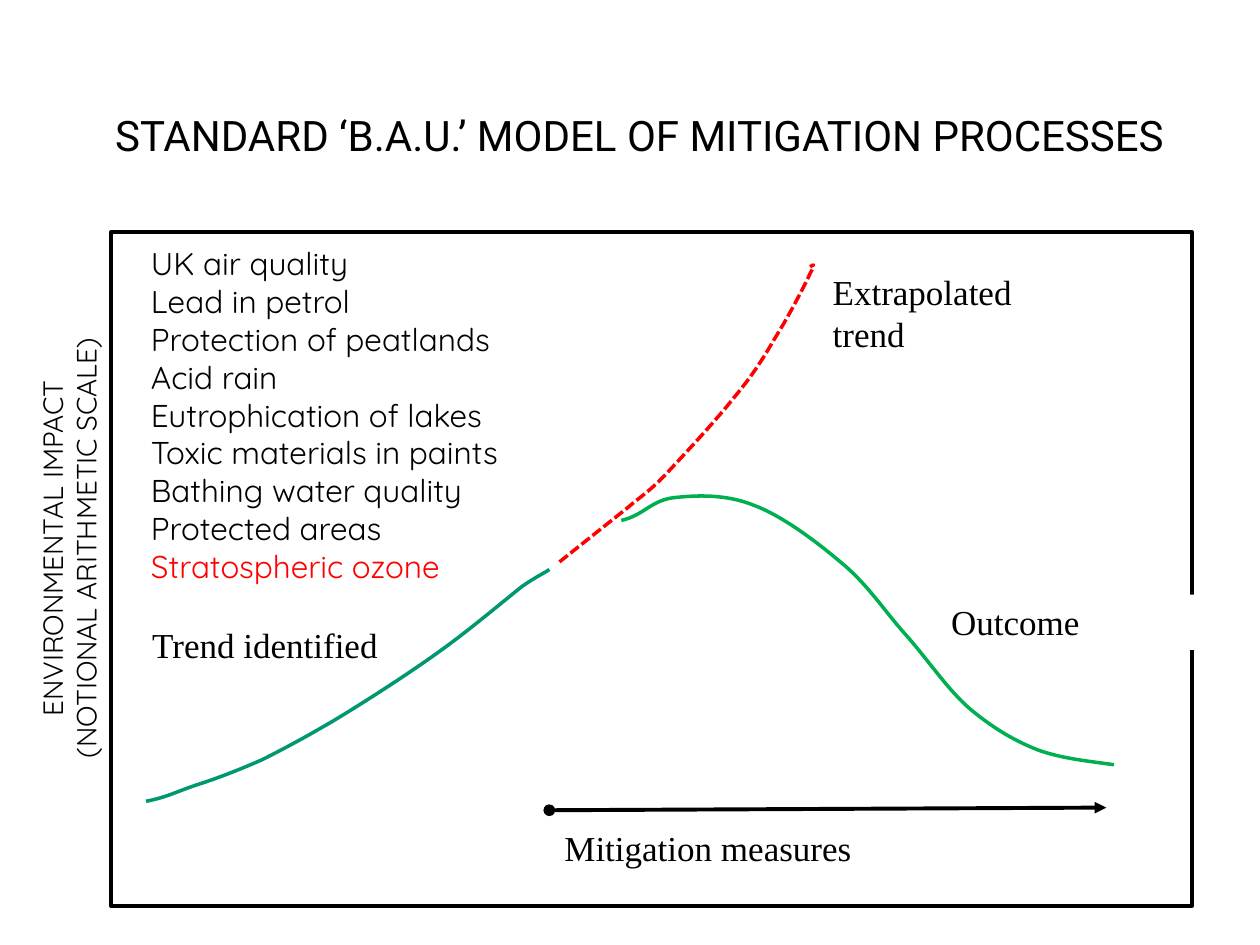
from pptx import Presentation
from pptx.dml.color import RGBColor
from pptx.enum.dml import MSO_LINE
from pptx.enum.shapes import MSO_CONNECTOR, MSO_SHAPE
from pptx.enum.text import MSO_ANCHOR, PP_ALIGN
from pptx.oxml.ns import qn
from pptx.oxml.xmlchemy import OxmlElement
from pptx.util import Pt

LABELS = [
    ("Outcome", (536.4, 339.8, 150.5, 31.7)),
    ("Trend identified", (79.9, 352.8, 150.5, 31.7)),
    ("Extrapolated trend", (468.7, 151.2, 150.5, 55.4)),
    ("Mitigation measures", (315.4, 468.7, 272.2, 31.7)),
]
CASES = ["UK air quality", "Lead in petrol", "Protection of peatlands",
         "Acid rain", "Eutrophication of lakes", "Toxic materials in paints",
         "Bathing water quality", "Protected areas", "Stratospheric ozone"]
RISE = [(83.5, 457.9),
        (95, 455.8), (101.5, 452.2), (112.3, 448.6),
        (123.8, 445), (136.8, 439.9), (149.8, 434.2),
        (162.7, 427.7), (173.5, 421.9), (190.8, 411.8),
        (207.4, 401.8), (233.3, 385.2), (251.3, 372.2),
        (269.3, 359.3), (288.7, 342.7), (298.8, 334.8),
        (309.6, 327.6), (312.5, 326.9), (313.9, 325.4)]
FALL = [(355, 297.4),
        (367.9, 294.5), (372.2, 285.8), (385.2, 284.4),
        (397.4, 283), (414.7, 282.2), (430.6, 288.7),
        (446.4, 294.5), (465.8, 308.9), (480.2, 321.1),
        (495.4, 333.4), (505.4, 349.2), (517.7, 362.9),
        (529.9, 376.6), (541.4, 393.8), (553.7, 404.6),
        (566.6, 415.4), (578.2, 422.6), (592.6, 428.4),
        (606.2, 433.4), (621.4, 434.9), (636.5, 437)]
SOAR = [(319.7, 321.1),
        (332.7, 310.8), (345.6, 300.5), (358.6, 290.2),
        (367.9, 282.2), (368.6, 283), (379.4, 272.2),
        (389.5, 261.4), (409, 240.5), (419.8, 226.8),
        (430.6, 213.8), (436.3, 204.5), (443.5, 192.2),
        (450.7, 180.7), (460.1, 162.7), (463, 156.2),
        (466.6, 149.8), (464.4, 151.2), (463, 152.6)]


def tint(code):
    """Turn a hex string into a colour."""
    return RGBColor.from_string(code)


def pts(box):
    """Turn point values into lengths."""
    return [Pt(n) for n in box]


def write(para, text, font, size, color="000000", align=PP_ALIGN.LEFT):
    """Add one styled run to a paragraph."""
    para.alignment = align
    run = para.add_run()
    run.text = text
    run.font.name = font
    run.font.size = Pt(size)
    run.font.color.rgb = tint(color)


def stroke(line, color, width):
    """Style a line."""
    line.color.rgb = tint(color)
    line.width = Pt(width)


def head(slide, box):
    """Place the slide title."""
    title = slide.shapes.title
    title.left, title.top, title.width, title.height = pts(box)
    frame = title.text_frame
    frame.vertical_anchor = MSO_ANCHOR.MIDDLE
    write(frame.paragraphs[0], "STANDARD ‘B.A.U.’ MODEL OF MITIGATION PROCESSES",
          "Roboto", 24, align=PP_ALIGN.CENTER)


def border(slide, box):
    """Draw the chart frame."""
    rect = slide.shapes.add_shape(MSO_SHAPE.RECTANGLE, *pts(box))
    rect.shadow.inherit = False
    rect.fill.background()
    stroke(rect.line, "000000", 2)


def label(slide, box, text):
    """Place a white label."""
    rect = slide.shapes.add_shape(MSO_SHAPE.RECTANGLE, *pts(box))
    rect.shadow.inherit = False
    rect.fill.solid()
    rect.fill.fore_color.rgb = tint("FFFFFF")
    rect.line.fill.background()
    frame = rect.text_frame
    frame.word_wrap = True
    frame.vertical_anchor = MSO_ANCHOR.TOP
    write(frame.paragraphs[0], text, "Times New Roman", 20)


def curve(slide, points, color, dash=None):
    """Draw a chain of cubic curves, three points to each."""
    start, *rest = [pts(point) for point in points]
    build = slide.shapes.build_freeform(*start)
    build.add_line_segments(rest, close=False)
    shape = build.convert_to_shape()
    shape.shadow.inherit = False
    shape.fill.background()
    stroke(shape.line, color, 2)
    if dash:
        shape.line.dash_style = dash
    steps = list(shape._element.iter(qn("a:lnTo")))
    for i in range(0, len(steps), 3):
        cubic = OxmlElement("a:cubicBezTo")
        steps[i].addprevious(cubic)
        for step in steps[i:i + 3]:
            cubic.append(step[0])
            step.getparent().remove(step)


def arrow(slide, ends):
    """Draw the time arrow with a dot at its start."""
    line = slide.shapes.add_connector(MSO_CONNECTOR.STRAIGHT, *pts(ends))
    stroke(line.line, "000000", 2.25)
    for tag, kind in (("a:headEnd", "oval"), ("a:tailEnd", "triangle")):
        tip = OxmlElement(tag)
        tip.set("type", kind)
        line.line._get_or_add_ln().append(tip)
    line._element.spPr.append(OxmlElement("a:effectLst"))


def axis(slide, box):
    """Place the upright axis caption."""
    text = slide.shapes.add_textbox(*pts(box))
    text.rotation = 270
    text.text_frame.word_wrap = True
    write(text.text_frame.paragraphs[0],
          "ENVIRONMENTAL IMPACT (NOTIONAL ARITHMETIC SCALE)",
          "Quicksand", 16, align=PP_ALIGN.CENTER)


def cases(slide, box):
    """List the cases, the last in red."""
    frame = slide.shapes.add_textbox(*pts(box)).text_frame
    frame.word_wrap = True
    for i, case in enumerate(CASES):
        para = frame.add_paragraph() if i else frame.paragraphs[0]
        write(para, case, "Quicksand", 18,
              "FF0000" if case == CASES[-1] else "000000")


def main():
    """Build and save the slide."""
    deck = Presentation()
    deck.slide_width, deck.slide_height = Pt(720), Pt(540)
    slide = deck.slides.add_slide(deck.slide_layouts[5])
    head(slide, (36.7, 31.7, 657.4, 90))
    border(slide, (63.4, 132.5, 617.8, 385.2))
    for text, box in LABELS:
        label(slide, box, text)
    curve(slide, RISE, "009771")
    curve(slide, FALL, "00B050")
    curve(slide, SOAR, "FF0000", MSO_LINE.SQUARE_DOT)
    arrow(slide, (313.9, 463, 632.2, 461.5))
    axis(slide, (-105.1, 290.2, 289.4, 46.1))
    cases(slide, (79.2, 136.1, 230.4, 225.4))
    deck.save("out.pptx")


if __name__ == "__main__":
    main()
